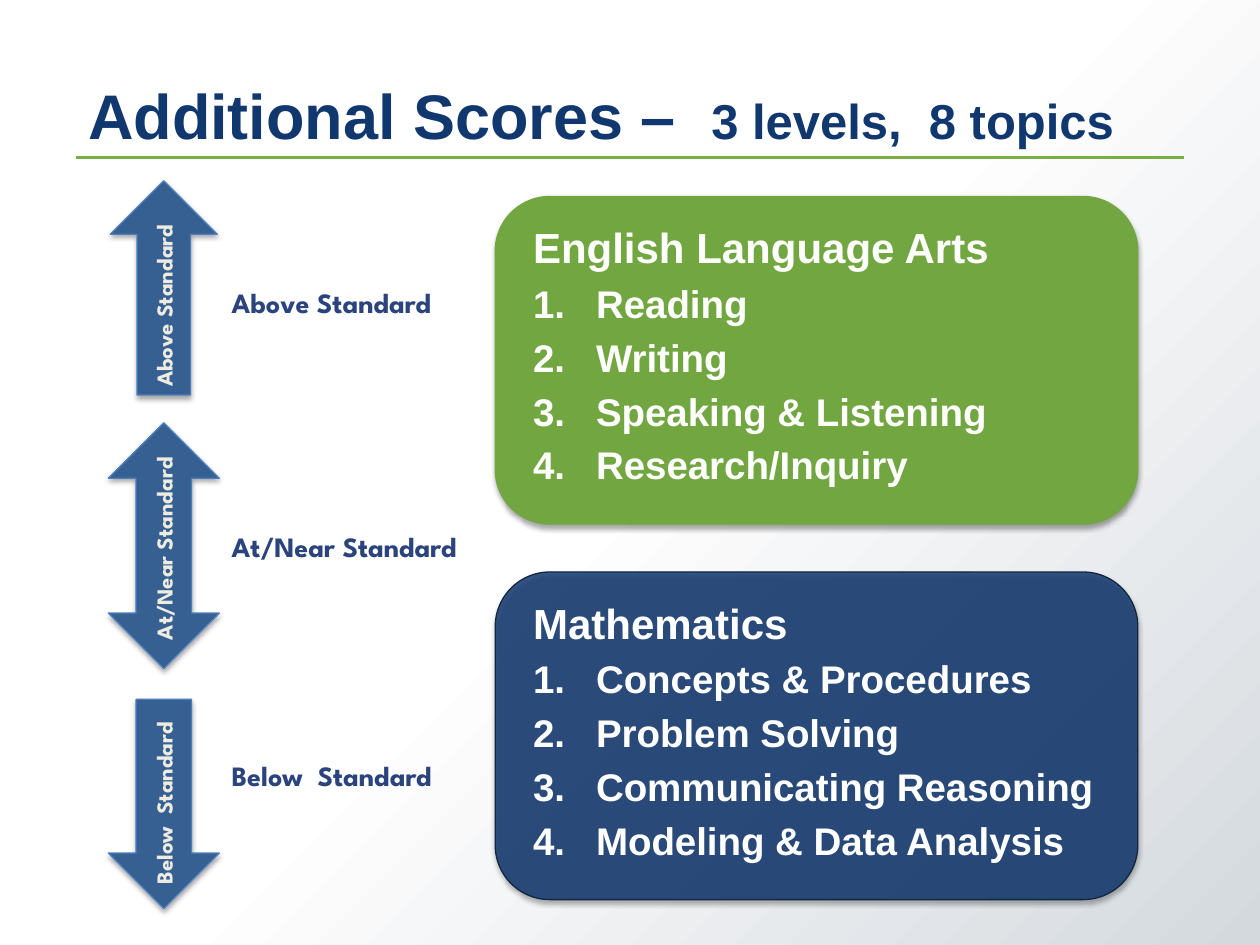
import pptx
import pptx.util
import pptx.dml.color
import pptx.enum.shapes
import pptx.enum.text
import pptx.oxml
import pptx.oxml.ns

Pt = pptx.util.Pt
Kind = pptx.enum.shapes.MSO_SHAPE
Fit = pptx.enum.text.MSO_AUTO_SIZE
Align = pptx.enum.text.PP_ALIGN
NS = pptx.oxml.ns.nsdecls("a")

HEX = {
    "white": "FFFFFF", "mist": "D4D9DE", "navy": "11376F", "edge": "10273F",
    "rule": "78AF44", "green": "71A640", "arrow": "376092",
    "rim": "4B7EBC", "cream": "EEECE1", "label": "2B447D",
}


def rgb(name):
    return pptx.dml.color.RGBColor.from_string(HEX[name])


def place(shape, left, top, width, height):
    shape.left, shape.top = Pt(left), Pt(top)
    shape.width, shape.height = Pt(width), Pt(height)


def add_run(para, text, size, color, font="Arial"):
    run = para.add_run()
    run.text = text
    run.font.name = font
    run.font.size = Pt(size)
    run.font.bold = True
    run.font.color.rgb = rgb(color)


def add_block(slide, kind, box, fill, line):
    """Filled shape with a soft shadow below it."""
    shape = slide.shapes.add_shape(kind, *map(Pt, box))
    shape.fill.solid()
    shape.fill.fore_color.rgb = rgb(fill)
    shape.line.color.rgb = rgb(line)
    shape.line.width = Pt(0.75)
    shape.shadow.inherit = False
    shade = pptx.oxml.parse_xml(
        f'<a:outerShdw {NS} blurRad="{Pt(3.1)}" dist="{Pt(1.8)}" dir="5400000" '
        'rotWithShape="0"><a:srgbClr val="000000"><a:alpha val="35000"/>'
        '</a:srgbClr></a:outerShdw>')
    shape._element.spPr.find(pptx.oxml.ns.qn("a:effectLst")).append(shade)
    return shape


def add_back(slide):
    fill = slide.background.fill
    fill.gradient()
    fill.gradient_angle = 315
    for stop, name, pos in zip(fill.gradient_stops, ("white", "mist"), (0.5, 1)):
        stop.color.rgb = rgb(name)
        stop.position = pos


def add_head(slide, box):
    left, top, width, height = box
    title = slide.shapes.title
    place(title, *box)
    frame = title.text_frame
    frame.auto_size = Fit.NONE
    para = frame.paragraphs[0]
    para.alignment = Align.LEFT
    add_run(para, "Additional Scores –  ", 36, "navy")
    add_run(para, "3 levels,  8 topics", 28, "navy")

    # Rule under the title
    base = top + height + 2.2
    rule = slide.shapes.add_connector(
        pptx.enum.shapes.MSO_CONNECTOR.STRAIGHT,
        Pt(left), Pt(base), Pt(left + width), Pt(base))
    rule.line.color.rgb = rgb("rule")
    rule.line.width = Pt(2)
    rule._element.spPr.append(pptx.oxml.parse_xml(f"<a:effectLst {NS}/>"))
    title._element.addprevious(rule._element)


def add_card(slide, body, box, fill, line, head, items, alpha=None):
    left, top, width, height = box
    card = add_block(slide, Kind.ROUNDED_RECTANGLE, box, fill, line)
    if alpha:
        tint = card._element.spPr.find(".//" + pptx.oxml.ns.qn("a:srgbClr"))
        tint.append(pptx.oxml.parse_xml(f'<a:alpha {NS} val="{alpha * 1000}"/>'))
    slide.shapes.title._element.addprevious(card._element)

    # Heading and numbered list
    place(body, left + 14.4, top + 10.8, width - 25.9, height - 21.6)
    frame = body.text_frame
    frame.auto_size = Fit.NONE
    for num, text in enumerate([head, *items]):
        para = frame.add_paragraph() if num else frame.paragraphs[0]
        add_run(para, text, 22 if num else 24, "white")
        inset = Pt(36 if num else 27)
        props = para._p.get_or_add_pPr()
        props.set("marL", str(inset))
        props.set("indent", str(-inset))
        mark = 'buAutoNum type="arabicPeriod"' if num else "buNone"
        if num:
            props.append(pptx.oxml.parse_xml(f'<a:buFont {NS} typeface="+mj-lt"/>'))
        props.append(pptx.oxml.parse_xml(
            f"<a:{mark.replace(' ', f' {NS} ', 1)}/>" if num else f"<a:{mark} {NS}/>"))


def add_text(slide, box, text, size, color, align=Align.LEFT):
    label = slide.shapes.add_textbox(*map(Pt, box))
    frame = label.text_frame
    frame.word_wrap = True
    frame.auto_size = Fit.SHAPE_TO_FIT_TEXT
    para = frame.paragraphs[0]
    para.alignment = align
    add_run(para, text, size, color, "League Spartan")
    return label


def add_level(slide, mid, kind, turn, size, text, tag, align, side):
    """Upright arrow centred on mid, its caption, and the label at its right."""
    x, y = mid
    length, thick = size
    arrow = add_block(slide, kind, (x - length / 2, y - thick / 2, length, thick),
                      "arrow", "rim")
    arrow.rotation = turn
    tag_mid, tag_len = tag
    note = add_text(slide, (x - 4.3 - tag_len / 2, tag_mid - 7.2, tag_len, 14.4),
                    text + (" " if align == Align.CENTER else ""), 13, "cream", align)
    note.rotation = 270
    add_text(slide, (x + 31.7, side, 151, 26.6), text, 16, "label")


def main():
    deck = pptx.Presentation()
    deck.slide_width, deck.slide_height = Pt(720), Pt(540)
    slide = deck.slides.add_slide(deck.slide_layouts[3])
    add_back(slide)
    add_head(slide, (43.2, 43.2, 633.6, 44.6))

    # Subject cards
    add_card(slide, slide.placeholders[1], (283, 112.3, 367.2, 187.2),
             "green", "green", "English Language Arts",
             ["Reading", "Writing", "Speaking & Listening", "Research/Inquiry"])
    add_card(slide, slide.placeholders[2], (283, 326.9, 367.2, 187.2),
             "navy", "edge", "Mathematics",
             ["Concepts & Procedures", "Problem Solving",
              "Communicating Reasoning", "Modeling & Data Analysis"], 84)

    # Score levels
    levels = [
        (164.5, Kind.LEFT_ARROW, 90, (122.4, 61.2), "Above Standard",
         (167, 122.4), Align.LEFT, 159.8),
        (311.8, Kind.LEFT_RIGHT_ARROW, 270, (140.4, 63.4), "At/Near Standard",
         (311.8, 140.4), Align.CENTER, 298.8),
        (459.4, Kind.LEFT_ARROW, 270, (119.5, 63.4), "Below  Standard",
         (457.2, 126.7), Align.CENTER, 429.8),
    ]
    for y, *rest in levels:
        add_level(slide, (93.6, y), *rest)
    deck.save("out.pptx")


if __name__ == "__main__":
    main()
